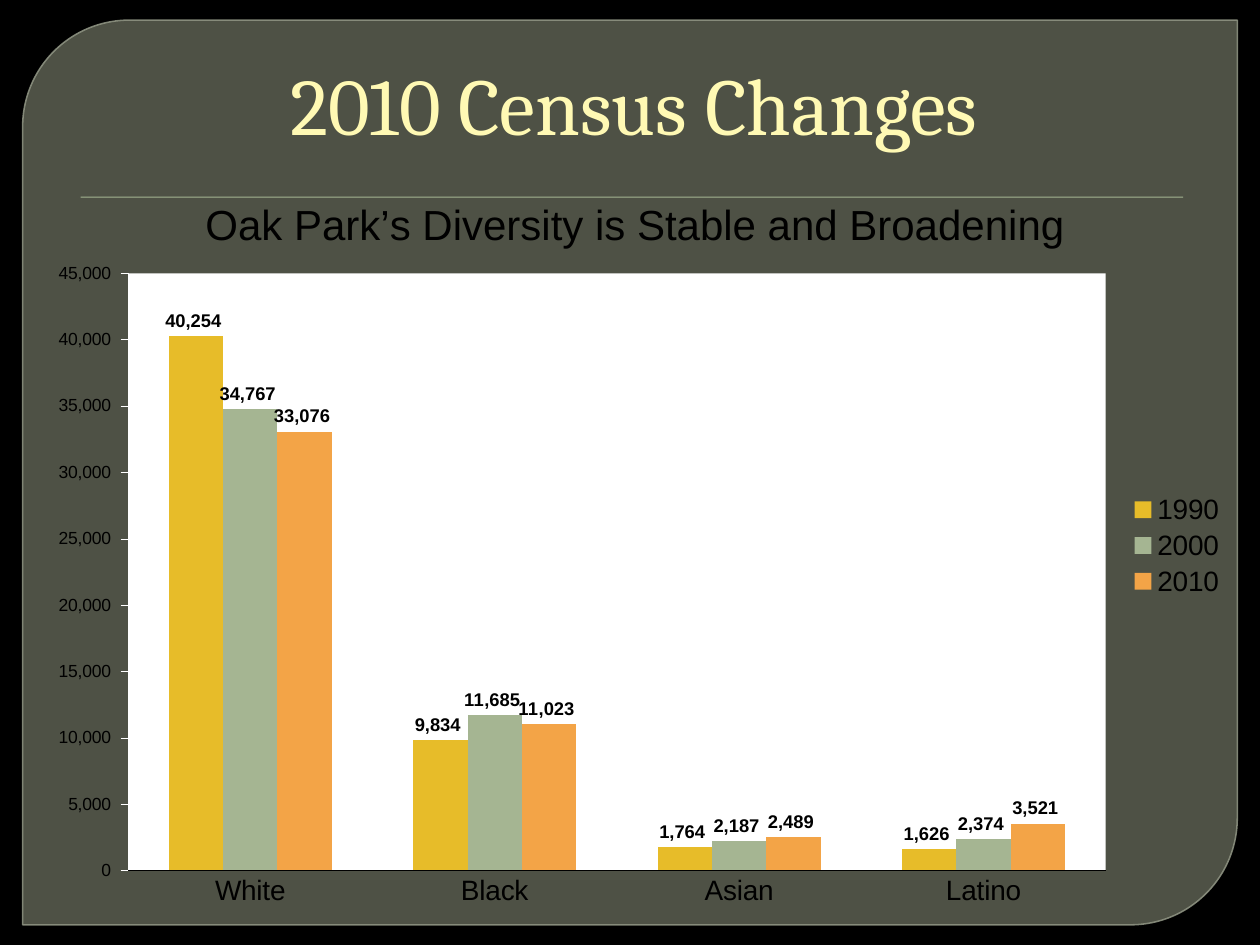
from pptx import Presentation
from pptx.chart.data import CategoryChartData
from pptx.dml.color import RGBColor
from pptx.enum.chart import XL_CHART_TYPE as ChartType, XL_LABEL_POSITION as LabelPosition
from pptx.enum.chart import XL_LEGEND_POSITION as LegendPosition, XL_TICK_MARK as TickMark
from pptx.enum.shapes import MSO_SHAPE as Shape
from pptx.enum.text import MSO_ANCHOR as Anchor, PP_ALIGN as Align
from pptx.oxml import parse_xml
from pptx.oxml.ns import nsdecls, qn
from pptx.util import Inches, Pt

NUMBER_FORMAT = "#,##0_);[Red]\\-#,##0"
CATEGORIES = ["White", "Black", "Asian", "Latino"]
CENSUS = {
    "1990": ("E7BC29", [40254, 9834, 1764, 1626]),
    "2000": ("A5B592", [34767, 11685, 2187, 2374]),
    "2010": ("F3A447", [33076, 11023, 2489, 3521]),
}


def color(value):
    return RGBColor.from_string(value)


class SlideBuilder:
    """Hold the style and the current slide, and add each kind of element."""

    title_font, chart_font = "Cambria", "Arial"
    black, white, title_color = "000000", "FFFFFF", "FFF9B4"

    def __init__(self, slide):
        self.slide = slide
        slide.background.fill.solid()
        slide.background.fill.fore_color.rgb = color(self.black)

    def set_font(self, font, size, name, value, bold=False):
        font.size, font.name, font.bold = Pt(size), name, bold
        font.color.rgb = color(value)

    def set_alpha(self, fill_format, percent):
        element = fill_format.fore_color._xFill.find(qn("a:srgbClr"))
        element.append(parse_xml(f'<a:alpha {nsdecls("a")} val="{percent * 1000}"/>'))

    def add_shape(self, kind, box, fill, alpha=100, line=None, corners=()):
        shape = self.slide.shapes.add_shape(kind, *map(Inches, box))
        shape.shadow.inherit = False
        for index, corner in enumerate(corners):
            shape.adjustments[index] = corner
        shape.fill.solid()
        shape.fill.fore_color.rgb = color(fill)
        self.set_alpha(shape.fill, alpha)
        if line:
            shape.line.color.rgb = color(line)
            shape.line.width = Pt(0.87)
            self.set_alpha(shape.line.fill, 88)
        else:
            shape.line.fill.background()

    def add_title(self, text, box):
        text_frame = self.slide.shapes.add_textbox(*map(Inches, box)).text_frame
        text_frame.word_wrap = True
        text_frame.vertical_anchor = Anchor.BOTTOM
        text_frame.text = text
        paragraph = text_frame.paragraphs[0]
        paragraph.alignment = Align.CENTER
        paragraph._p.get_or_add_pPr().set("marL", str(Inches(0.06)))
        self.set_font(paragraph.runs[0].font, 46, self.title_font, self.title_color)

    def add_column_chart(self, title, categories, groups, box, plot_box):
        data = CategoryChartData(number_format=NUMBER_FORMAT)
        data.categories = categories
        for name, (_, values) in groups.items():
            data.add_series(name, values)
        frame = self.slide.shapes.add_chart(ChartType.COLUMN_CLUSTERED, *map(Inches, box), data)
        chart = frame.chart
        self.set_font(chart.font, 10, self.chart_font, self.black)
        chart.has_title = True
        chart.chart_title.text_frame.text = title
        title_run = chart.chart_title.text_frame.paragraphs[0].runs[0]
        self.set_font(title_run.font, 24, self.chart_font, self.black)
        chart.has_legend = True
        chart.legend.position = LegendPosition.RIGHT
        chart.legend.include_in_layout = False
        self.set_font(chart.legend.font, 16, self.chart_font, self.black)
        self.style_axis(chart.category_axis, 16, TickMark.NONE, self.black)
        self.style_axis(chart.value_axis, 10, TickMark.OUTSIDE, self.white)
        chart.value_axis.minimum_scale, chart.value_axis.maximum_scale = 0, 45000
        chart.value_axis.major_unit = 5000
        chart.value_axis.tick_labels.number_format = NUMBER_FORMAT
        chart.value_axis.tick_labels.number_format_is_linked = False
        plot = chart.plots[0]
        plot.gap_width, plot.overlap, plot.vary_by_categories = 150, 0, False
        for series, (fill, _) in zip(plot.series, groups.values()):
            self.style_series(series, fill)
        self.style_plot_area(chart._chartSpace.chart.plotArea, plot_box)

    def style_axis(self, axis, size, tick, line):
        axis.has_major_gridlines = False
        axis.major_tick_mark, axis.minor_tick_mark = tick, TickMark.NONE
        axis.format.line.color.rgb = color(line)
        axis.format.line.width = Pt(0.25)
        self.set_font(axis.tick_labels.font, size, self.chart_font, self.black)

    def style_series(self, series, fill):
        series.format.fill.solid()
        series.format.fill.fore_color.rgb = color(fill)
        series.invert_if_negative = False
        labels = series.data_labels
        labels.show_value = True
        labels.position = LabelPosition.OUTSIDE_END
        labels.number_format = NUMBER_FORMAT
        labels.number_format_is_linked = False
        self.set_font(labels.font, 10.5, self.chart_font, self.black, bold=True)

    def style_plot_area(self, plot_area, plot_box):
        for layout in plot_area.findall(qn("c:layout")):
            plot_area.remove(layout)
        sizes = "".join(f'<c:{key} val="{value}"/>' for key, value in zip("xywh", plot_box))
        plot_area.insert(0, parse_xml(
            f'<c:layout {nsdecls("c")}><c:manualLayout><c:layoutTarget val="inner"/>'
            f'<c:xMode val="edge"/><c:yMode val="edge"/>{sizes}</c:manualLayout></c:layout>'))
        plot_area.append(parse_xml(
            f'<c:spPr {nsdecls("c", "a")}><a:solidFill><a:srgbClr val="{self.white}"/>'
            '</a:solidFill><a:ln><a:noFill/></a:ln></c:spPr>'))


def main():
    presentation = Presentation()
    presentation.slide_width, presentation.slide_height = Inches(10), Inches(7.5)
    builder = SlideBuilder(presentation.slides.add_slide(presentation.slide_layouts[6]))
    builder.add_shape(Shape.ROUND_2_DIAG_RECTANGLE, (0.18, 0.16, 9.64, 7.18), "787D6B",
                      alpha=65, line="8F9483", corners=(0.118, 0))
    builder.add_shape(Shape.RECTANGLE, (0.64, 1.56, 8.75, 0.01), "A5B592")
    builder.add_title("2010 Census Changes", (0.5, 0.28, 9, 0.97))
    builder.add_column_chart("Oak Park’s Diversity is Stable and Broadening", CATEGORIES, CENSUS,
                             (0.25, 1.33, 9.58, 6), (0.08, 0.14, 0.81, 0.79))
    presentation.save("out.pptx")


if __name__ == "__main__":
    main()
